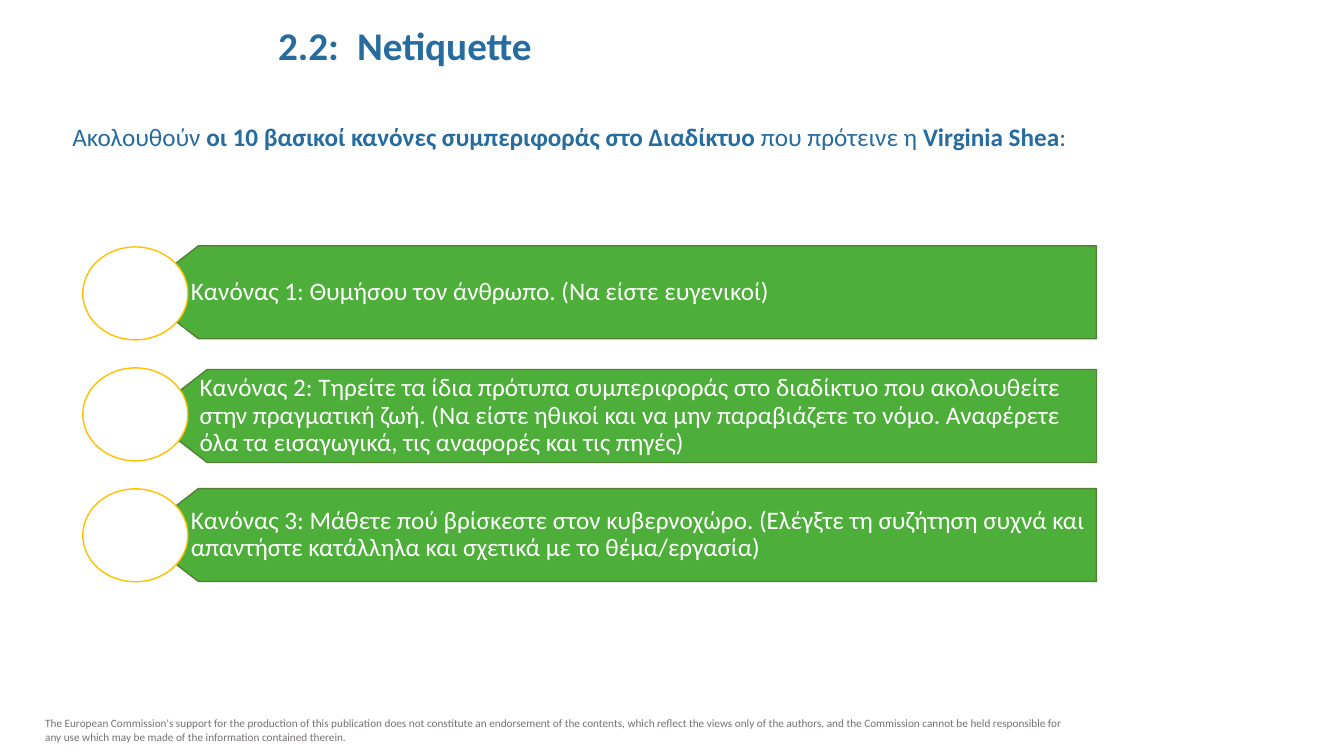
"""Build the Netiquette slide showing the first three rules."""
from lxml import etree
from pptx import Presentation
from pptx.dml.color import RGBColor
from pptx.enum import shapes, text
from pptx.oxml.ns import qn
from pptx.util import Pt

BLUE = RGBColor(0x26, 0x6C, 0x9F)
GREEN = RGBColor(0x4E, 0xAE, 0x3A)
DARK_GREEN = RGBColor(0x53, 0x80, 0x35)
GOLD = RGBColor(0xFF, 0xC0, 0x00)
GREY = RGBColor(0x76, 0x71, 0x71)
WHITE = RGBColor(0xFF, 0xFF, 0xFF)


def add_box(left, top, width, height, size, color):
    box = page.shapes.add_textbox(Pt(left), Pt(top), Pt(width), Pt(height))
    box.text_frame.word_wrap = True
    para = box.text_frame.paragraphs[0]
    set_font(para, size, color)
    return box, para


def set_font(para, size, color):
    para.font.name = "Calibri"
    para.font.size = Pt(size)
    para.font.color.rgb = color


deck = Presentation()
deck.slide_width, deck.slide_height = Pt(960), Pt(540)
page = deck.slides.add_slide(deck.slide_layouts[6])

footer, para = add_box(25.2, 508.3, 753.1, 26.6, 8, GREY)
footer.text_frame.auto_size = text.MSO_AUTO_SIZE.SHAPE_TO_FIT_TEXT
para.add_run().text = (
    "The European Commission's support for the production of this publication "
    "does not constitute an endorsement of the contents, which reflect the views "
    "only of the authors, and the Commission cannot be held responsible for any "
    "use which may be made of the information contained therein."
)

title = page.shapes.add_textbox(Pt(191.5), Pt(6.4), Pt(288.7), Pt(57))
title.text_frame.word_wrap = True
para = title.text_frame.paragraphs[0]
para.text = "2.2:\tNetiquette"
tabs = etree.SubElement(para._p.get_or_add_pPr(), qn("a:tabLst"))
etree.SubElement(tabs, qn("a:tab"), pos=str(Pt(56.5)), algn="l")
para.line_spacing = 1.15
set_font(para, 28, BLUE)
para.font.bold = True

intro, para = add_box(44.6, 79.9, 780.5, 31, 18, BLUE)
intro.text_frame.auto_size = text.MSO_AUTO_SIZE.SHAPE_TO_FIT_TEXT
para.alignment = text.PP_ALIGN.JUSTIFY
para.line_spacing = 1.15
para.space_after = Pt(10)
for words, bold in [
    ("Ακολουθούν ", False),
    ("οι 10 βασικοί κανόνες συμπεριφοράς στο Διαδίκτυο ", True),
    ("που πρότεινε η ", False),
    ("Virginia Shea", True),
    (":", False),
]:
    span = para.add_run()
    span.text = words
    span.font.bold = bold

RIGHT, HEIGHT, POINT = 783.2, 66.4, 43
FIRST_CIRCLE, PITCH = 176.4, 86.4
rules = [
    (98.8, 175.6, "Κανόνας 1: Θυμήσου τον άνθρωπο. (Να είστε ευγενικοί)"),
    (105, 264, "Κανόνας 2: Τηρείτε τα ίδια πρότυπα συμπεριφοράς στο διαδίκτυο που "
     "ακολουθείτε στην πραγματική ζωή. (Να είστε ηθικοί και να μην παραβιάζετε "
     "το νόμο. Αναφέρετε όλα τα εισαγωγικά, τις αναφορές και τις πηγές)"),
    (98.8, 349, "Κανόνας 3: Μάθετε πού βρίσκεστε στον κυβερνοχώρο. (Ελέγξτε τη "
     "συζήτηση συχνά και απαντήστε κατάλληλα και σχετικά με το θέμα/εργασία)"),
]
for index, (left, top, rule) in enumerate(rules):
    bottom = top + HEIGHT
    outline = page.shapes.build_freeform(Pt(RIGHT), Pt(bottom))
    corners = [(left + POINT, bottom), (left, top + HEIGHT / 2),
               (left + POINT, top), (RIGHT, top)]
    outline.add_line_segments([(Pt(x), Pt(y)) for x, y in corners], close=True)
    arrow = outline.convert_to_shape()
    circle = page.shapes.add_shape(
        shapes.MSO_SHAPE.OVAL, Pt(59.2), Pt(FIRST_CIRCLE + index * PITCH),
        Pt(75), Pt(HEIGHT))
    for shape, fill, line in [(arrow, GREEN, DARK_GREEN), (circle, WHITE, GOLD)]:
        shape.shadow.inherit = False
        shape.fill.solid()
        shape.fill.fore_color.rgb = fill
        shape.line.color.rgb = line
        shape.line.width = Pt(1)

    frame = arrow.text_frame
    frame.word_wrap = True
    frame.vertical_anchor = text.MSO_ANCHOR.MIDDLE
    frame.margin_left, frame.margin_right = Pt(37.6), Pt(8)
    frame.margin_top = frame.margin_bottom = Pt(4.5)
    para = frame.paragraphs[0]
    para.text = rule
    para.alignment = text.PP_ALIGN.LEFT
    para.line_spacing = 0.9
    set_font(para, 18, WHITE)

deck.save("out.pptx")
